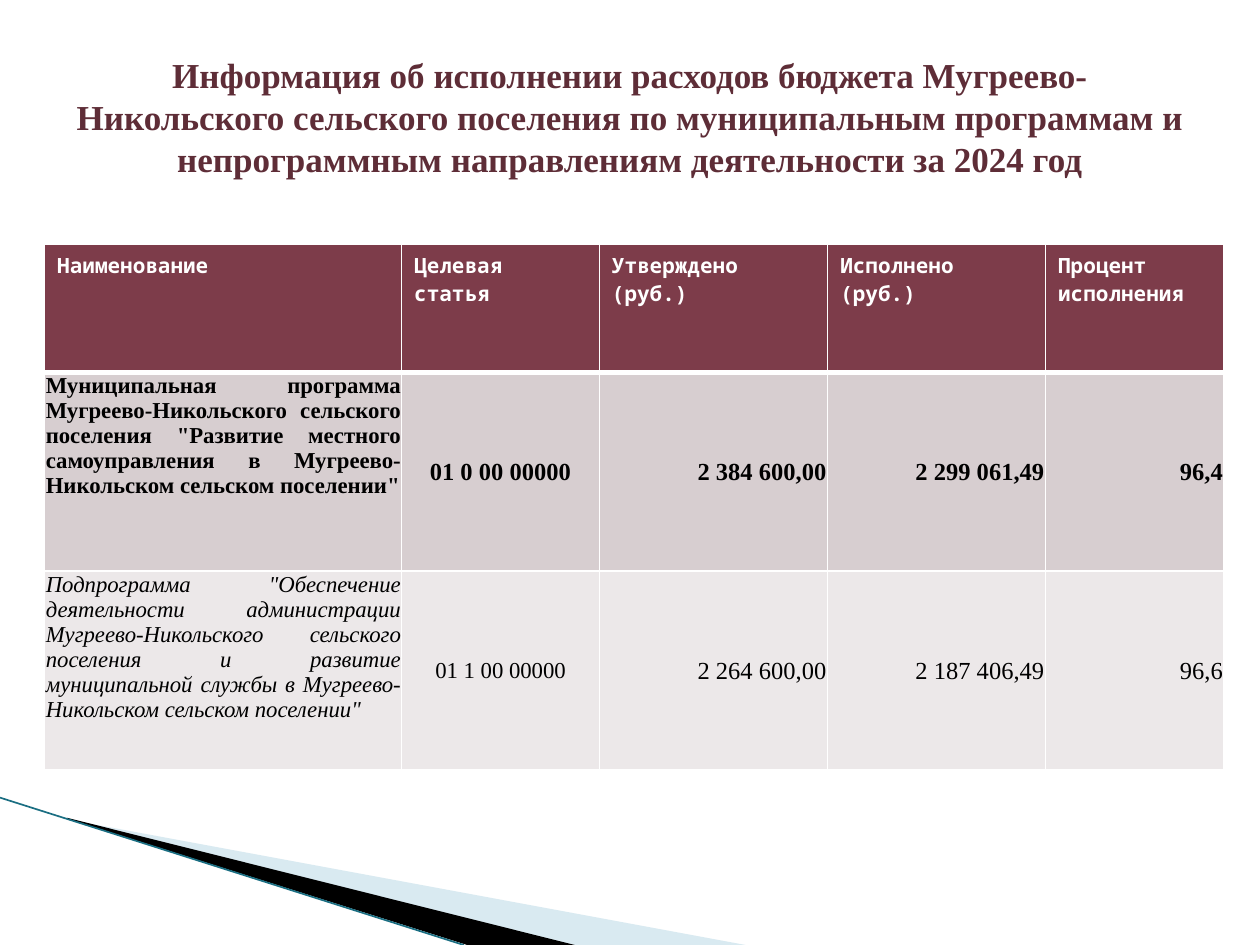
from pptx import Presentation
from pptx.dml.color import RGBColor
from pptx.enum.shapes import MSO_CONNECTOR
from pptx.enum.text import MSO_ANCHOR, MSO_AUTO_SIZE, PP_ALIGN
from pptx.oxml.ns import qn
from pptx.util import Pt
from lxml.etree import SubElement

WHITE = RGBColor(0xFF, 0xFF, 0xFF)
BLACK = RGBColor(0, 0, 0)
TITLE_COLOR = RGBColor(0x5E, 0x2D, 0x37)
HEADER_FILL = RGBColor(0x7D, 0x3C, 0x4A)
PROGRAM_FILL = RGBColor(0xD7, 0xCE, 0xD0)
SUBPROGRAM_FILL = RGBColor(0xEC, 0xE8, 0xE9)
PALE_BLUE = RGBColor(0xA0, 0xCB, 0xDC)
TEAL = RGBColor(0x1A, 0x6E, 0x82)
SERIF, MONO = "Times New Roman", "Noto Sans Mono"

TITLE = ("Информация об исполнении расходов бюджета Мугреево-Никольского "
         "сельского поселения по муниципальным программам и "
         "непрограммным направлениям деятельности за 2024 год")
HEADERS = ["Наименование", "Целевая статья", "Утверждено (руб.)",
           "Исполнено (руб.)", "Процент исполнения"]
PROGRAM = ['Муниципальная программа Мугреево-Никольского сельского поселения '
           '"Развитие местного самоуправления в Мугреево-Никольском '
           'сельском поселении"',
           "01 0 00 00000", "2 384 600,00", "2 299 061,49", "96,4"]
SUBPROGRAM = ['Подпрограмма "Обеспечение деятельности администрации '
              'Мугреево-Никольского сельского поселения и развитие '
              'муниципальной службы в Мугреево-Никольском сельском поселении"',
              "01 1 00 00000", "2 264 600,00", "2 187 406,49", "96,6"]

COLUMN_WIDTHS = [204, 113, 130.5, 124.5, 102]
ROW_HEIGHTS = [73, 113.5, 113.5]
BODY_ALIGN = [PP_ALIGN.JUSTIFY, PP_ALIGN.CENTER] + [PP_ALIGN.RIGHT] * 3
# texts, fill, bold, font sizes by column
BODY_ROWS = [
    (PROGRAM, PROGRAM_FILL, True, [13, 14, 14, 14, 14]),
    (SUBPROGRAM, SUBPROGRAM_FILL, False, [13, 13, 14, 14, 14]),
]

# outline points, fill, opacity in percent
WEDGES = [
    ([(39.6, 468.5), (426, 540), (328, 540), (39.6, 468)], PALE_BLUE, 40),
    ([(38.2, 467.3), (328.5, 540), (267, 540), (38.9, 468)], BLACK, 100),
]


def add_wedge(slide, points, color, opacity):
    start, *others = [(Pt(x), Pt(y)) for x, y in points]
    builder = slide.shapes.build_freeform(*start)
    builder.add_line_segments(others)
    wedge = builder.convert_to_shape()
    wedge.shadow.inherit = False
    wedge.line.fill.background()
    wedge.fill.solid()
    wedge.fill.fore_color.rgb = color
    if opacity < 100:
        tint = next(wedge._element.spPr.iter(qn("a:srgbClr")))
        SubElement(tint, qn("a:alpha"), val=str(opacity * 1000))


def add_edge_line(slide):
    edge = slide.shapes.add_connector(
        MSO_CONNECTOR.STRAIGHT, Pt(0), Pt(455.8), Pt(265), Pt(540))
    edge.line.color.rgb = TEAL
    edge.line.width = Pt(0.95)
    SubElement(edge._element.spPr, qn("a:effectLst"))


def add_text(para, text, font, size, color, bold=False, italic=False):
    span = para.add_run()
    span.text = text
    span.font.name = font
    span.font.size = Pt(size)
    span.font.color.rgb = color
    span.font.bold = bold
    span.font.italic = italic


def style_cell(cell, fill, bottom=1, top=1):
    """Give the cell white borders, in points, and a plain fill."""
    properties = cell._tc.get_or_add_tcPr()
    for side, width in (("L", 1), ("R", 1), ("T", top), ("B", bottom)):
        border = SubElement(properties, qn(f"a:ln{side}"), w=str(Pt(width)))
        solid = SubElement(border, qn("a:solidFill"))
        SubElement(solid, qn("a:srgbClr"), val=str(WHITE))
    cell.fill.solid()
    cell.fill.fore_color.rgb = fill


def add_budget_table(slide):
    table = slide.shapes.add_table(
        1 + len(BODY_ROWS), len(HEADERS), Pt(25.5), Pt(139.7),
        Pt(sum(COLUMN_WIDTHS)), Pt(sum(ROW_HEIGHTS))).table
    for column, width in zip(table.columns, COLUMN_WIDTHS):
        column.width = Pt(width)
    for row, height in zip(table.rows, ROW_HEIGHTS):
        row.height = Pt(height)

    for column, text in enumerate(HEADERS):
        cell = table.cell(0, column)
        style_cell(cell, HEADER_FILL, bottom=3)
        add_text(cell.text_frame.paragraphs[0], text, MONO, 12, WHITE, bold=True)

    for row, (texts, fill, bold, sizes) in enumerate(BODY_ROWS, start=1):
        for column, text in enumerate(texts):
            cell = table.cell(row, column)
            style_cell(cell, fill, top=3 if row == 1 else 1)
            cell.margin_left = cell.margin_right = cell.margin_top = Pt(0.7)
            cell.margin_bottom = 0
            cell.vertical_anchor = MSO_ANCHOR.MIDDLE if column else MSO_ANCHOR.TOP
            para = cell.text_frame.paragraphs[0]
            para.alignment = BODY_ALIGN[column]
            add_text(para, text, SERIF, sizes[column], BLACK, bold,
                     italic=not bold and column == 0)


def fill_title(title):
    title.left, title.top, title.width, title.height = Pt(36), Pt(21.6), Pt(648), Pt(90)
    frame = title.text_frame
    frame.word_wrap = True
    frame.auto_size = MSO_AUTO_SIZE.NONE
    frame.vertical_anchor = MSO_ANCHOR.MIDDLE
    para = frame.paragraphs[0]
    para.alignment = PP_ALIGN.CENTER
    para.line_spacing = Pt(24)
    add_text(para, TITLE, SERIF, 20, TITLE_COLOR, bold=True)


def main():
    deck = Presentation()
    deck.slide_width, deck.slide_height = Pt(720), Pt(540)
    slide = deck.slides.add_slide(deck.slide_layouts[5])
    for points, color, opacity in WEDGES:
        add_wedge(slide, points, color, opacity)
    add_edge_line(slide)
    add_budget_table(slide)
    fill_title(slide.shapes.title)
    deck.save("out.pptx")


if __name__ == "__main__":
    main()
